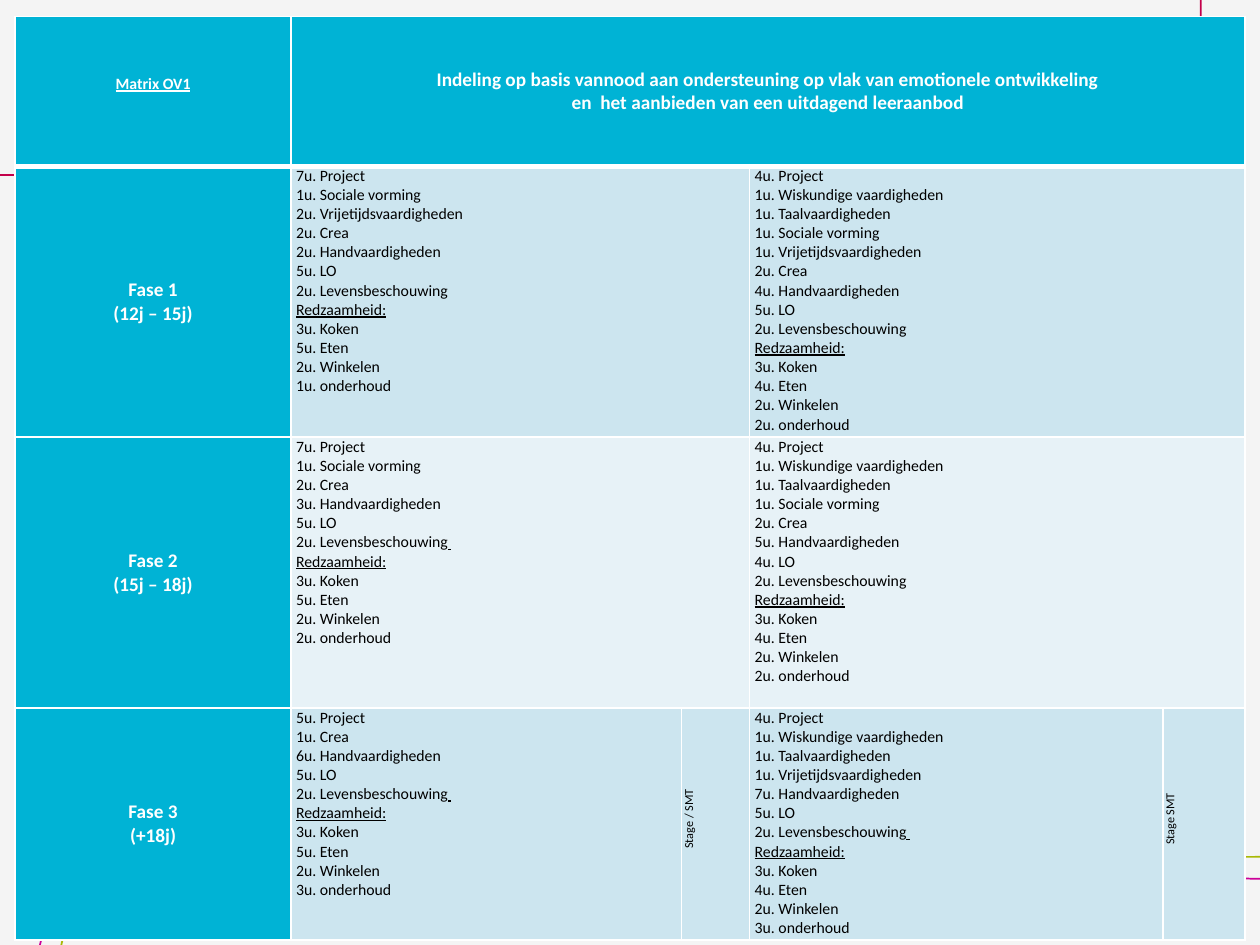
"""Build the Matrix OV1 timetable slide."""
from copy import deepcopy
from dataclasses import dataclass

from lxml import etree
from pptx import Presentation
from pptx.dml.color import RGBColor
from pptx.enum.text import MSO_ANCHOR, PP_ALIGN
from pptx.oxml.ns import qn
from pptx.util import Inches, Pt

MID, TOP = MSO_ANCHOR.MIDDLE, MSO_ANCHOR.TOP
MIDDLE, LEFT = PP_ALIGN.CENTER, PP_ALIGN.LEFT
COLORS = {
    "back": "F4F4F4", "head": "00B3D5", "dark": "CCE5EF", "light": "E7F2F7",
    "white": "FFFFFF", "black": "000000",
    "pink": "CC0099", "lime": "A9B905", "red": "C3004A",
}
COLS = (2.19, 3.1, 0.54, 3.28, 0.65)
ROWS = (1.19, 2.15, 2.15, 1.84)
HEADING = "Redzaamheid:"


@dataclass
class Curve:
    color: str
    start: tuple
    bend: tuple
    end: tuple


@dataclass
class Phase:
    name: str
    fill: str
    left: str
    right: str
    notes: tuple = ()


CURVES = (
    Curve("pink", (0.28, 8.91), ((0.3, 7.67), (0.3, 7.44), (0.39, 7.23), (0.56, 7.07),
          (0.72, 6.91), (0.94, 6.82), (1.17, 6.83)), (10.3, 6.98)),
    Curve("lime", (0.47, 8.91), ((0.47, 7.67), (0.47, 7.44), (0.56, 7.22), (0.72, 7.06),
          (0.88, 6.9), (1.1, 6.81), (1.33, 6.81)), (10.46, 6.8)),
    Curve("red", (9.53, -0.58), ((9.53, 0.57), (9.53, 0.79), (9.44, 0.99), (9.28, 1.14),
          (9.12, 1.29), (8.9, 1.38), (8.67, 1.38)), (-0.46, 1.39)),
)
PHASES = (
    Phase("Fase 1|(12j – 15j)", "dark",
          "7u. Project|1u. Sociale vorming|2u. Vrijetijdsvaardigheden|2u. Crea|"
          "2u. Handvaardigheden|5u. LO\n2u. Levensbeschouwing|Redzaamheid:|"
          "3u. Koken|5u. Eten|2u. Winkelen|1u. onderhoud",
          "4u. Project|1u. Wiskundige vaardigheden|1u. Taalvaardigheden|"
          "1u. Sociale vorming|1u. Vrijetijdsvaardigheden|2u. Crea|"
          "4u. Handvaardigheden|5u. LO\n2u. Levensbeschouwing|Redzaamheid:|"
          "3u. Koken|4u. Eten|2u. Winkelen|2u. onderhoud"),
    Phase("Fase 2|(15j – 18j)", "light",
          "7u. Project|1u. Sociale vorming|2u. Crea|3u. Handvaardigheden|"
          "5u. LO\n2u. Levensbeschouwing |Redzaamheid:|"
          "3u. Koken|5u. Eten|2u. Winkelen|2u. onderhoud",
          "4u. Project|1u. Wiskundige vaardigheden|1u. Taalvaardigheden|"
          "1u. Sociale vorming|2u. Crea|5u. Handvaardigheden|"
          "4u. LO\n2u. Levensbeschouwing|Redzaamheid:|"
          "3u. Koken|4u. Eten|2u. Winkelen|2u. onderhoud"),
    Phase("Fase 3|(+18j)", "dark",
          "5u. Project|1u. Crea|6u. Handvaardigheden|"
          "5u. LO\n2u. Levensbeschouwing |Redzaamheid:|"
          "3u. Koken|5u. Eten|2u. Winkelen|3u. onderhoud",
          "4u. Project|1u. Wiskundige vaardigheden|1u. Taalvaardigheden|"
          "1u. Vrijetijdsvaardigheden|7u. Handvaardigheden|"
          "5u. LO\n2u. Levensbeschouwing |Redzaamheid:|"
          "3u. Koken|4u. Eten|2u. Winkelen|3u. onderhoud",
          ("Stage / SMT", "Stage SMT")),
)


def paint(name: str) -> RGBColor:
    return RGBColor.from_string(COLORS[name])


def add_run(para, text: str, size: float, color: str, bold: bool, under: bool):
    run = para.add_run()
    run.text = text
    font = run.font
    font.name, font.size, font.bold, font.underline = "Calibri", Pt(size), bold, under
    font.color.rgb = paint(color)
    return run


def write(cell, text: str, *, size: float = 9, color: str = "black", bold: bool = False,
          under: bool = False, align=LEFT, anchor=TOP, foot: float = 0,
          turn: bool = False) -> None:
    cell.vertical_anchor = anchor
    cell.margin_left = cell.margin_right = Inches(0.04)
    cell.margin_top, cell.margin_bottom = 0, Inches(foot)
    frame = cell.text_frame
    for pos, line in enumerate(text.split("|")):
        para = frame.add_paragraph() if pos else frame.paragraphs[0]
        para.alignment = align
        look = (size, color, bold)
        for part, words in enumerate(line.split("\n")):
            if part:
                para.add_line_break()
            run = add_run(para, words.rstrip(), *look, under or words == HEADING)
        for gap in para._p.findall(qn("a:br")):
            gap.insert(0, deepcopy(run.font._element))
        if line.endswith(" "):
            add_run(para, " ", *look, True)
        if turn:
            para._p.get_or_add_pPr().set("marL", str(Inches(0.08)))
    if turn:
        cell._tc.get_or_add_tcPr().set("vert", "vert270")


def style(cell, fill: str, top: float = 1, bottom: float = 1) -> None:
    props = cell._tc.get_or_add_tcPr()
    for side, width in (("L", 1), ("R", 1), ("T", top), ("B", bottom)):
        line = etree.SubElement(props, qn(f"a:ln{side}"), w=str(Pt(width)))
        solid = etree.SubElement(line, qn("a:solidFill"))
        etree.SubElement(solid, qn("a:srgbClr"), val=COLORS["white"])
    cell.fill.solid()
    cell.fill.fore_color.rgb = paint(fill)


def trace(a: tuple, b: tuple, c: tuple, d: tuple, steps: int = 12) -> list:
    spots = []
    for step in range(1, steps + 1):
        t = step / steps
        u = 1 - t
        spots.append(tuple(u**3 * p + 3 * u * u * t * q + 3 * u * t * t * r + t**3 * s
                           for p, q, r, s in zip(a, b, c, d)))
    return spots


def draw_curve(slide, curve: Curve) -> None:
    bend = curve.bend
    spots = [bend[0], *trace(*bend[:4]), *trace(*bend[3:]), curve.end]
    pen = slide.shapes.build_freeform(*map(Inches, curve.start))
    pen.add_line_segments([tuple(map(Inches, spot)) for spot in spots], close=False)
    shape = pen.convert_to_shape()
    shape.shadow.inherit = False
    shape.fill.background()
    shape.line.color.rgb = paint(curve.color)
    shape.line.width = Pt(1)


def draw_table(slide) -> None:
    table = slide.shapes.add_table(len(ROWS), len(COLS), Inches(0.12), Inches(0.13),
                                   Inches(sum(COLS)), Inches(sum(ROWS))).table
    for col, width in zip(table.columns, COLS):
        col.width = Inches(width)
    for row, height in zip(table.rows, ROWS):
        row.height = Inches(height)
    head = dict(color="white", bold=True, align=MIDDLE, anchor=MID)
    for col in range(len(COLS)):
        style(table.cell(0, col), "head", bottom=3)
    table.cell(0, 1).merge(table.cell(0, 4))
    write(table.cell(0, 0), "Matrix OV1", under=True, foot=0.12, **head)
    write(table.cell(0, 1), "Indeling op basis vannood aan ondersteuning op vlak van "
          "emotionele ontwikkeling|en  het aanbieden van een uitdagend leeraanbod",
          size=11, **head)
    for row, phase in enumerate(PHASES, 1):
        for col in range(len(COLS)):
            style(table.cell(row, col), phase.fill if col else "head",
                  top=3 if row == 1 else 1)
        write(table.cell(row, 0), phase.name, size=11, **head)
        for col, text in ((1, phase.left), (3, phase.right)):
            write(table.cell(row, col), text)
            if not phase.notes:
                table.cell(row, col).merge(table.cell(row, col + 1))
        for col, note in zip((2, 4), phase.notes):
            write(table.cell(row, col), note, size=7, align=MIDDLE, anchor=MID, turn=True)


def main() -> None:
    deck = Presentation()
    deck.slide_width, deck.slide_height = Inches(10), Inches(7.5)
    slide = deck.slides.add_slide(deck.slide_layouts[6])
    slide.background.fill.solid()
    slide.background.fill.fore_color.rgb = paint("back")
    for curve in CURVES:
        draw_curve(slide, curve)
    draw_table(slide)
    deck.save("out.pptx")


if __name__ == "__main__":
    main()
